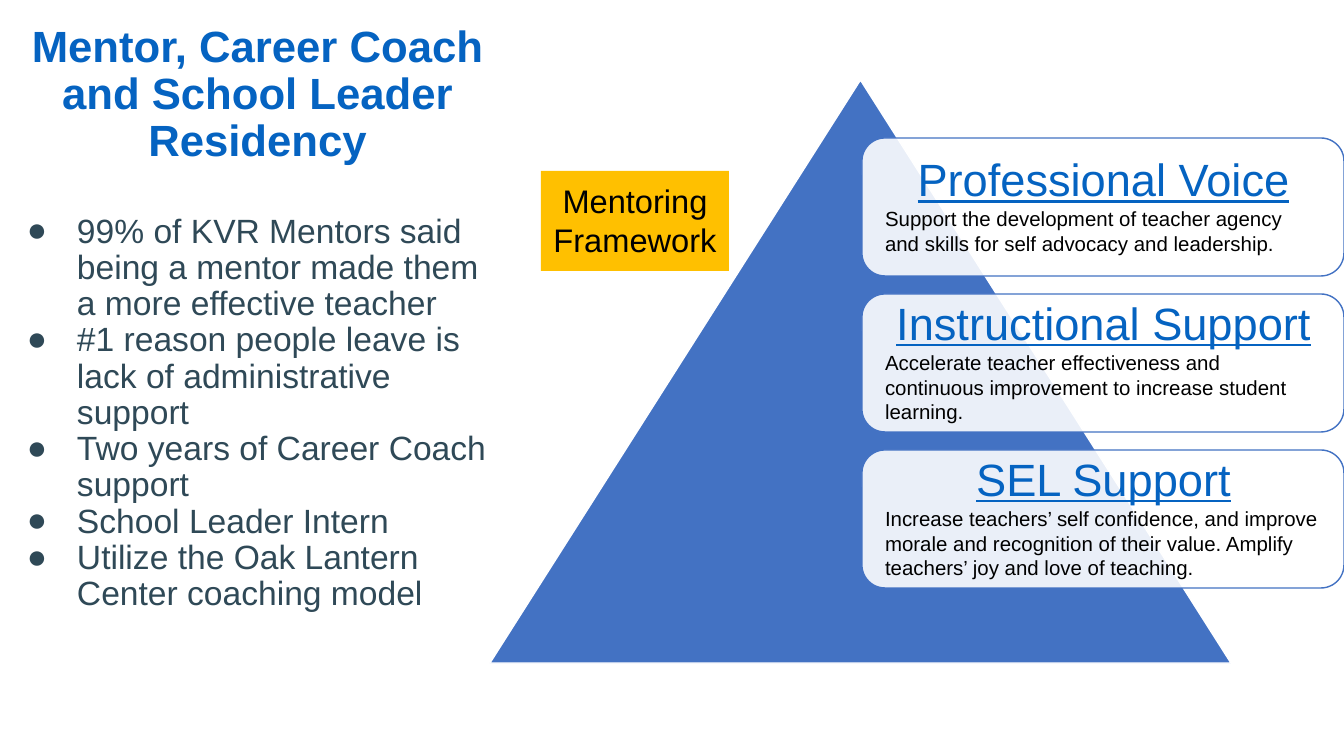
from lxml.etree import SubElement
from pptx import Presentation
from pptx.dml.color import RGBColor
from pptx.enum.shapes import MSO_SHAPE as Shape
from pptx.enum.text import MSO_ANCHOR as Anchor, PP_ALIGN as Align
from pptx.oxml.ns import qn
from pptx.util import Emu, Pt

SCALE = 12192000 / 1344
WHITE = RGBColor(0xFF, 0xFF, 0xFF)
BLACK = RGBColor(0x00, 0x00, 0x00)
BLUE = RGBColor(0x43, 0x72, 0xC3)
LINK_BLUE = RGBColor(0x05, 0x63, 0xC1)
SLATE = RGBColor(0x2F, 0x49, 0x57)
AMBER = RGBColor(0xFF, 0xC0, 0x00)

BULLETS = [
    "99% of KVR Mentors said being a mentor made them a more effective teacher",
    "#1 reason people leave is lack of administrative support",
    "Two years of Career Coach support",
    "School Leader Intern",
    "Utilize the Oak Lantern Center coaching model",
]
SUPPORTS = [
    ("Professional Voice",
     "Support the development of teacher agency and skills for self advocacy and leadership."),
    ("Instructional Support",
     "Accelerate teacher effectiveness and continuous improvement to increase student learning."),
    ("SEL Support",
     "Increase teachers’ self confidence, and improve morale and recognition of their value. "
     "Amplify teachers’ joy and love of teaching."),
]


def px(length):
    return Emu(round(length * SCALE))


def write(frame, text, size, color, align=Align.LEFT, spacing=None, before=0,
          bold=False, underline=False, bullet=None):
    first = frame.paragraphs[0]
    para = frame.add_paragraph() if first.runs else first
    para.alignment = align
    para.space_before = Pt(before)
    if spacing:
        para.line_spacing = spacing
    span = para.add_run()
    span.text = text
    font = span.font
    font.name, font.size, font.bold, font.underline = "Arial", Pt(size), bold, underline
    font.color.rgb = color
    if bullet:
        props = para._p.get_or_add_pPr()
        props.set("marL", str(px(67)))
        props.set("indent", str(px(-50)))
        SubElement(SubElement(props, qn("a:buClr")), qn("a:srgbClr"), val=str(color))
        SubElement(props, qn("a:buFont"), typeface="Arial")
        SubElement(props, qn("a:buChar"), char=bullet)


class Board:
    tight = 0.9

    def __init__(self, deck):
        self.page = deck.slides.add_slide(deck.slide_layouts[6])

    def shape(self, kind, left, top, width, height, fill, line=None, opacity=100):
        shape = self.page.shapes.add_shape(kind, px(left), px(top), px(width), px(height))
        shape.shadow.inherit = False
        shape.fill.solid()
        shape.fill.fore_color.rgb = fill
        if opacity < 100:
            color = shape.fill._xPr.find(qn("a:solidFill"))[0]
            SubElement(color, qn("a:alpha"), val=str(opacity * 1000))
        if line is None:
            shape.line.fill.background()
        else:
            shape.line.color.rgb = line
            shape.line.width = Pt(1)
        return shape

    def frame(self, box, anchor, side, end):
        frame = box.text_frame
        frame.word_wrap = True
        frame.vertical_anchor = anchor
        frame.margin_left = frame.margin_right = px(side)
        frame.margin_top = frame.margin_bottom = px(end)
        return frame

    def text(self, left, top, width, height, anchor, side, end):
        box = self.page.shapes.add_textbox(px(left), px(top), px(width), px(height))
        return self.frame(box, anchor, side, end)

    def summary(self, title, bullets):
        frame = self.text(0, 18, 515, 600, Anchor.BOTTOM, 10, 5)
        write(frame, title, 31.2, LINK_BLUE, Align.CENTER, self.tight, bold=True)
        for index, bullet in enumerate(bullets):
            write(frame, bullet, 24, SLATE, spacing=self.tight,
                  before=0 if index else 34, bullet="●")

    def card(self, top, heading, detail):
        self.shape(Shape.ROUNDED_RECTANGLE, 862, top, 482, 138, WHITE, BLUE, 89)
        frame = self.text(871, top + 6, 465, 125, Anchor.MIDDLE, 14, 15)
        write(frame, heading, 32.3, LINK_BLUE, Align.CENTER, self.tight, underline=True)
        write(frame, detail, 14.6, BLACK)

    def label(self, text):
        box = self.shape(Shape.RECTANGLE, 541, 171, 188, 100, AMBER)
        write(self.frame(box, Anchor.TOP, 10, 10), text, 23.3, BLACK, Align.CENTER)


def main():
    deck = Presentation()
    deck.slide_width, deck.slide_height = px(1344), px(756)
    board = Board(deck)
    board.summary("Mentor, Career Coach and School Leader Residency", BULLETS)
    board.shape(Shape.ISOSCELES_TRIANGLE, 490, 80, 741, 583, BLUE, WHITE)
    for index, (heading, detail) in enumerate(SUPPORTS):
        board.card(138 + index * 156, heading, detail)
    board.label("Mentoring Framework")
    deck.save("out.pptx")


if __name__ == "__main__":
    main()
